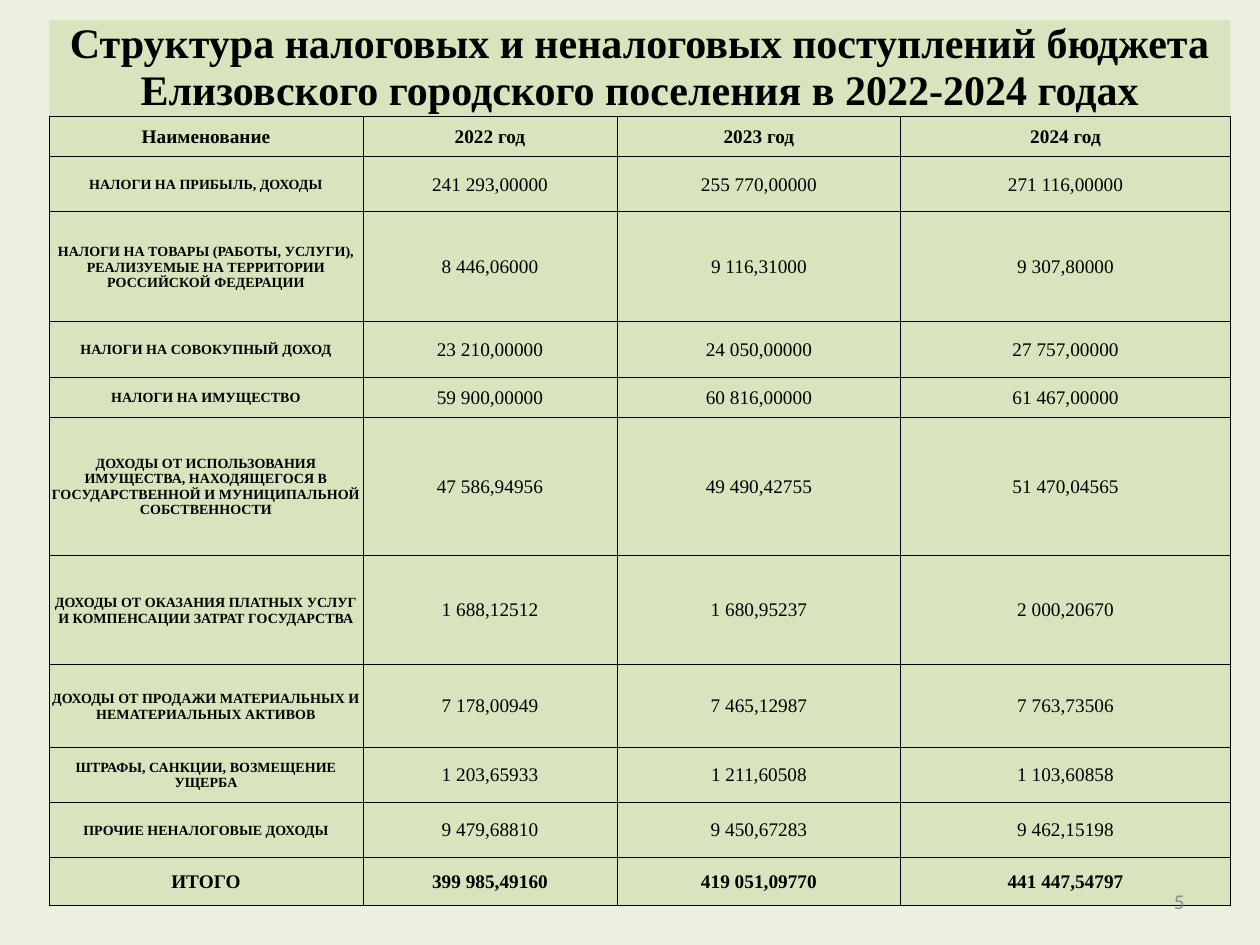
"""Builds a budget slide with a table of tax and non-tax revenue by year."""
from lxml import etree
from pptx import Presentation, util as u
from pptx.dml.color import RGBColor
from pptx.enum import text
from pptx.oxml import ns

HUES = {"page": "EBF1DE", "cell": "D7E4BD", "ink": "000000", "gray": "8C8C8C"}
SERIF = "Times New Roman"
TITLE = "Структура налоговых и неналоговых поступлений бюджета Елизовского городского поселения в 2022-2024 годах"
WIDTHS = [179.3, 145.2, 162.2, 188.2]
HEIGHTS = [55.2, 22.8, 31.5, 62.8, 31.8, 22.8, 78.8, 62.8, 47, 31.5, 31.5, 27.4]
ROWS = [
    ["Наименование", "2022 год", "2023 год", "2024 год"],
    ["НАЛОГИ НА ПРИБЫЛЬ, ДОХОДЫ", "241 293,00000", "255 770,00000", "271 116,00000"],
    ["НАЛОГИ НА ТОВАРЫ (РАБОТЫ, УСЛУГИ), РЕАЛИЗУЕМЫЕ НА ТЕРРИТОРИИ РОССИЙСКОЙ ФЕДЕРАЦИИ",
     "8 446,06000", "9 116,31000", "9 307,80000"],
    ["НАЛОГИ НА СОВОКУПНЫЙ ДОХОД", "23 210,00000", "24 050,00000", "27 757,00000"],
    ["НАЛОГИ НА ИМУЩЕСТВО", "59 900,00000", "60 816,00000", "61 467,00000"],
    ["ДОХОДЫ ОТ ИСПОЛЬЗОВАНИЯ ИМУЩЕСТВА, НАХОДЯЩЕГОСЯ В ГОСУДАРСТВЕННОЙ И МУНИЦИПАЛЬНОЙ СОБСТВЕННОСТИ",
     "47 586,94956", "49 490,42755", "51 470,04565"],
    ["ДОХОДЫ ОТ ОКАЗАНИЯ ПЛАТНЫХ УСЛУГ И КОМПЕНСАЦИИ ЗАТРАТ ГОСУДАРСТВА",
     "1 688,12512", "1 680,95237", "2 000,20670"],
    ["ДОХОДЫ ОТ ПРОДАЖИ МАТЕРИАЛЬНЫХ И НЕМАТЕРИАЛЬНЫХ АКТИВОВ",
     "7 178,00949", "7 465,12987", "7 763,73506"],
    ["ШТРАФЫ, САНКЦИИ, ВОЗМЕЩЕНИЕ УЩЕРБА", "1 203,65933", "1 211,60508", "1 103,60858"],
    ["ПРОЧИЕ НЕНАЛОГОВЫЕ ДОХОДЫ", "9 479,68810", "9 450,67283", "9 462,15198"],
    ["ИТОГО", "399 985,49160", "419 051,09770", "441 447,54797"],
]


def hue(name):
    return RGBColor.from_string(HUES[name])


def write(frame, words, size, bold=False, face=SERIF, ink="ink", align=text.PP_ALIGN.CENTER):
    frame.text = words
    para = frame.paragraphs[0]
    para.alignment = align
    for run in para.runs:
        run.font.size = u.Pt(size)
        run.font.bold = bold
        run.font.name = face
        run.font.color.rgb = hue(ink)


def border(cell, drawn):
    props = cell._tc.get_or_add_tcPr()
    for spot, side in enumerate("LRTB"):
        line = etree.Element(ns.qn(f"a:ln{side}"), w=str(u.Pt(0.5)))
        if side in drawn:
            fill = etree.SubElement(line, ns.qn("a:solidFill"))
            etree.SubElement(fill, ns.qn("a:srgbClr"), val=HUES["ink"])
        else:
            etree.SubElement(line, ns.qn("a:noFill"))
        props.insert(spot, line)


def dress(cell, drawn="LRTB", anchor=text.MSO_ANCHOR.MIDDLE):
    cell.fill.solid()
    cell.fill.fore_color.rgb = hue("cell")
    cell.margin_left = cell.margin_right = cell.margin_top = u.Pt(0.6)
    cell.margin_bottom = u.Pt(0)
    cell.vertical_anchor = anchor
    border(cell, drawn)


def add_grid(slide):
    table = slide.shapes.add_table(
        len(HEIGHTS), len(WIDTHS), u.Pt(28.1), u.Pt(11.5),
        u.Pt(sum(WIDTHS)), u.Pt(sum(HEIGHTS))).table
    for col, width in zip(table.columns, WIDTHS):
        col.width = u.Pt(width)
    for row, height in zip(table.rows, HEIGHTS):
        row.height = u.Pt(height)
    for cell in table.rows[0].cells:
        dress(cell, "B", text.MSO_ANCHOR.TOP)
    head = table.cell(0, 0)
    head.merge(table.cell(0, len(WIDTHS) - 1))
    write(head.text_frame, TITLE, 24, True)
    for r, row in enumerate(ROWS, 1):
        edge = r in (1, len(ROWS))
        for c, words in enumerate(row):
            cell = table.cell(r, c)
            dress(cell)
            label = c == 0
            write(cell.text_frame, words, 8 if label and not edge else 11, label or edge)


def add_page(slide):
    box = slide.shapes.add_textbox(u.Pt(516), u.Pt(500.5), u.Pt(168), u.Pt(28.75))
    frame = box.text_frame
    frame.word_wrap = True
    frame.vertical_anchor = text.MSO_ANCHOR.MIDDLE
    write(frame, "5", 12, face="Calibri", ink="gray", align=text.PP_ALIGN.RIGHT)


def main():
    deck = Presentation()
    deck.slide_width, deck.slide_height = u.Pt(720), u.Pt(540)
    slide = deck.slides.add_slide(deck.slide_layouts[6])
    slide.background.fill.solid()
    slide.background.fill.fore_color.rgb = hue("page")
    add_grid(slide)
    add_page(slide)
    deck.save("out.pptx")


if __name__ == "__main__":
    main()
